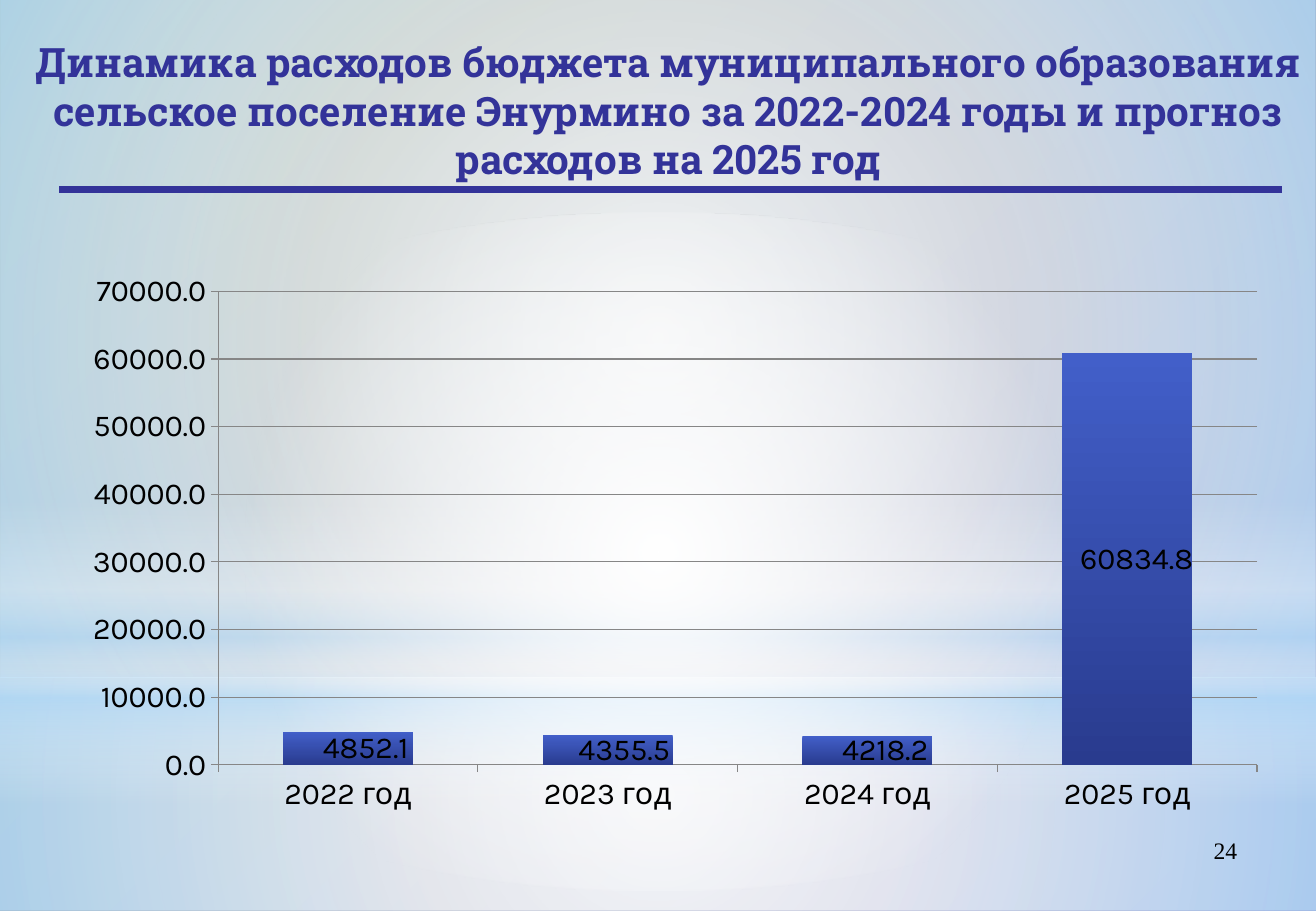
from lxml import etree
from pptx import Presentation
from pptx.chart.data import CategoryChartData
from pptx.dml.color import RGBColor
from pptx.enum.chart import XL_CHART_TYPE, XL_LABEL_POSITION, XL_TICK_MARK
from pptx.enum.shapes import MSO_CONNECTOR, MSO_SHAPE
from pptx.enum.text import MSO_ANCHOR, PP_ALIGN
from pptx.oxml import parse_xml
from pptx.oxml.ns import nsdecls, qn
from pptx.util import Inches, Pt

RECT, OVAL = MSO_SHAPE.RECTANGLE, MSO_SHAPE.OVAL
STACKED = XL_CHART_TYPE.COLUMN_STACKED
STRAIGHT = MSO_CONNECTOR.STRAIGHT
LABEL_CENTER = XL_LABEL_POSITION.CENTER
TICK_OUT = XL_TICK_MARK.OUTSIDE
CENTER, RIGHT = PP_ALIGN.CENTER, PP_ALIGN.RIGHT
MIDDLE, TOP = MSO_ANCHOR.MIDDLE, MSO_ANCHOR.TOP

COLORS = {
    "title": "333399", "text": "000000", "white": "FFFFFF", "sky": "B4DCFA",
    "sage": "96AB94", "violet": "8488C4", "grid": "868686",
    "bar_top": "425FC9", "bar_bottom": "293B8E",
}
EXPENSES = {"2022 год": 4852.1, "2023 год": 4355.5,
            "2024 год": 4218.2, "2025 год": 60834.8}
LABEL_SHIFTS = (0.015, 0.014, 0.015, 0.008)
TITLE = ("Динамика расходов бюджета муниципального образования сельское "
         "поселение Энурмино за 2022-2024 годы и прогноз расходов на 2025 год")


def rgb(name):
    return RGBColor.from_string(COLORS[name])


def set_gradient(fill, props, stops, angle=None):
    fill.gradient()
    grad = props.find(qn("a:gradFill"))
    items = "".join(
        f'<a:gs pos="{pos * 1000}"><a:srgbClr val="{COLORS[color]}">'
        f'<a:alpha val="{alpha * 1000}"/></a:srgbClr></a:gs>'
        for pos, color, alpha in stops)
    if angle is None:
        direction = ('<a:path path="circle"><a:fillToRect l="50000" t="50000" '
                     'r="50000" b="50000"/></a:path>')
    else:
        direction = f'<a:lin ang="{angle * 60000}" scaled="0"/>'
    new = parse_xml(f'<a:gradFill {nsdecls("a")} rotWithShape="1">'
                    f'<a:gsLst>{items}</a:gsLst>{direction}</a:gradFill>')
    props.replace(grad, new)


def add_glow(slide, kind, top, height, stops, angle=None):
    sp = slide.shapes.add_shape(kind, 0, Inches(top), Inches(10.84), Inches(height))
    sp.shadow.inherit = False
    sp.line.fill.background()
    set_gradient(sp.fill, sp._element.spPr, stops, angle)


def add_background(slide):
    fill = slide.background.fill
    fill.gradient()
    fill.gradient_angle = 315
    for stop, color in zip(fill.gradient_stops, ("sage", "violet")):
        stop.color.rgb = rgb(color)
        stop.position = 0 if color == "sage" else 1
    add_glow(slide, RECT, 5.58, 1.92,
             [(0, "white", 91), (37, "white", 76), (100, "sky", 79)])
    add_glow(slide, RECT, 0, 5.58,
             [(0, "white", 89), (48, "white", 62), (100, "sky", 79)])
    add_glow(slide, RECT, 4.12, 2.5,
             [(0, "white", 0), (29, "white", 30), (45, "sky", 40),
              (55, "white", 26), (65, "sky", 60), (100, "white", 0)], 90)
    add_glow(slide, OVAL, 1.75, 5.58, [(0, "white", 100), (56, "white", 0)])


def add_text(slide, box, text, font, size, color, align, anchor, bold=False):
    tf = slide.shapes.add_textbox(*map(Inches, box)).text_frame
    tf.word_wrap = True
    tf.vertical_anchor = anchor
    p = tf.paragraphs[0]
    p.text = text
    p.alignment = align
    r = p.runs[0]
    r.font.name, r.font.size, r.font.bold = font, Pt(size), bold
    r.font.color.rgb = rgb(color)


def add_rule(slide, left, right, y):
    line = slide.shapes.add_connector(
        STRAIGHT, Inches(left), Inches(y), Inches(right), Inches(y))
    line.line.color.rgb = rgb("title")
    line.line.width = Pt(3.75)
    etree.SubElement(line._element.spPr, qn("a:effectLst"))


def layout_xml(**values):
    items = "".join(f'<c:{key} val="{val}"/>' for key, val in values.items())
    return parse_xml(f'<c:layout {nsdecls("c")}><c:manualLayout>{items}'
                     '</c:manualLayout></c:layout>')


def style_axis(axis):
    axis.major_tick_mark = TICK_OUT
    axis.format.line.color.rgb = rgb("grid")


def add_labels(series):
    labels = series.data_labels
    labels.show_value = True
    labels.number_format = "0.0"
    labels.number_format_is_linked = False
    for i in range(len(EXPENSES)):
        series.points[i].data_label.position = LABEL_CENTER
    for label, shift in zip(series._element.iter(qn("c:dLbl")), LABEL_SHIFTS):
        label.find(qn("c:idx")).addnext(layout_xml(x=shift, y=0))


def add_expense_chart(slide):
    data = CategoryChartData(number_format="0.0")
    data.categories = list(EXPENSES)
    data.add_series("Series 1", list(EXPENSES.values()))
    box = map(Inches, (0.63, 1.93, 9.73, 5.2))
    chart = slide.shapes.add_chart(STACKED, *box, data).chart
    chart.has_legend = False
    chart.has_title = False
    chart.font.name, chart.font.size = "Karla", Pt(18)
    chart.font.color.rgb = rgb("text")

    style_axis(chart.category_axis)
    axis = chart.value_axis
    style_axis(axis)
    axis.minimum_scale, axis.maximum_scale, axis.major_unit = 0, 70000, 10000
    axis.major_gridlines.format.line.color.rgb = rgb("grid")
    axis.tick_labels.number_format = "0.0"
    axis.tick_labels.number_format_is_linked = False

    plot = chart.plots[0]
    plot.gap_width, plot.overlap = 100, 100
    plot.vary_by_categories = False
    series = plot.series[0]
    fill = series.format.fill
    set_gradient(fill, series._element.spPr,
                 [(0, "bar_top", 100), (100, "bar_bottom", 100)], 90)
    add_labels(series)

    area = chart._chartSpace.find(".//" + qn("c:plotArea"))
    for old in area.findall(qn("c:layout")):
        area.remove(old)
    area.insert(0, layout_xml(layoutTarget="inner", xMode="edge", yMode="edge",
                              x=0.12, y=0.09, w=0.88, h=0.75))


def main():
    prs = Presentation()
    prs.slide_width, prs.slide_height = Inches(10.84), Inches(7.5)
    slide = prs.slides.add_slide(prs.slide_layouts[6])
    add_background(slide)
    add_text(slide, (7.76, 6.83, 2.53, 0.52), "24", "Times New Roman", 14,
             "text", RIGHT, TOP)
    add_text(slide, (0.18, 0.32, 10.65, 1.17), TITLE, "Roboto Slab", 24,
             "title", CENTER, MIDDLE, bold=True)
    add_rule(slide, 0.49, 10.56, 1.56)
    add_expense_chart(slide)
    prs.save("out.pptx")


if __name__ == "__main__":
    main()
